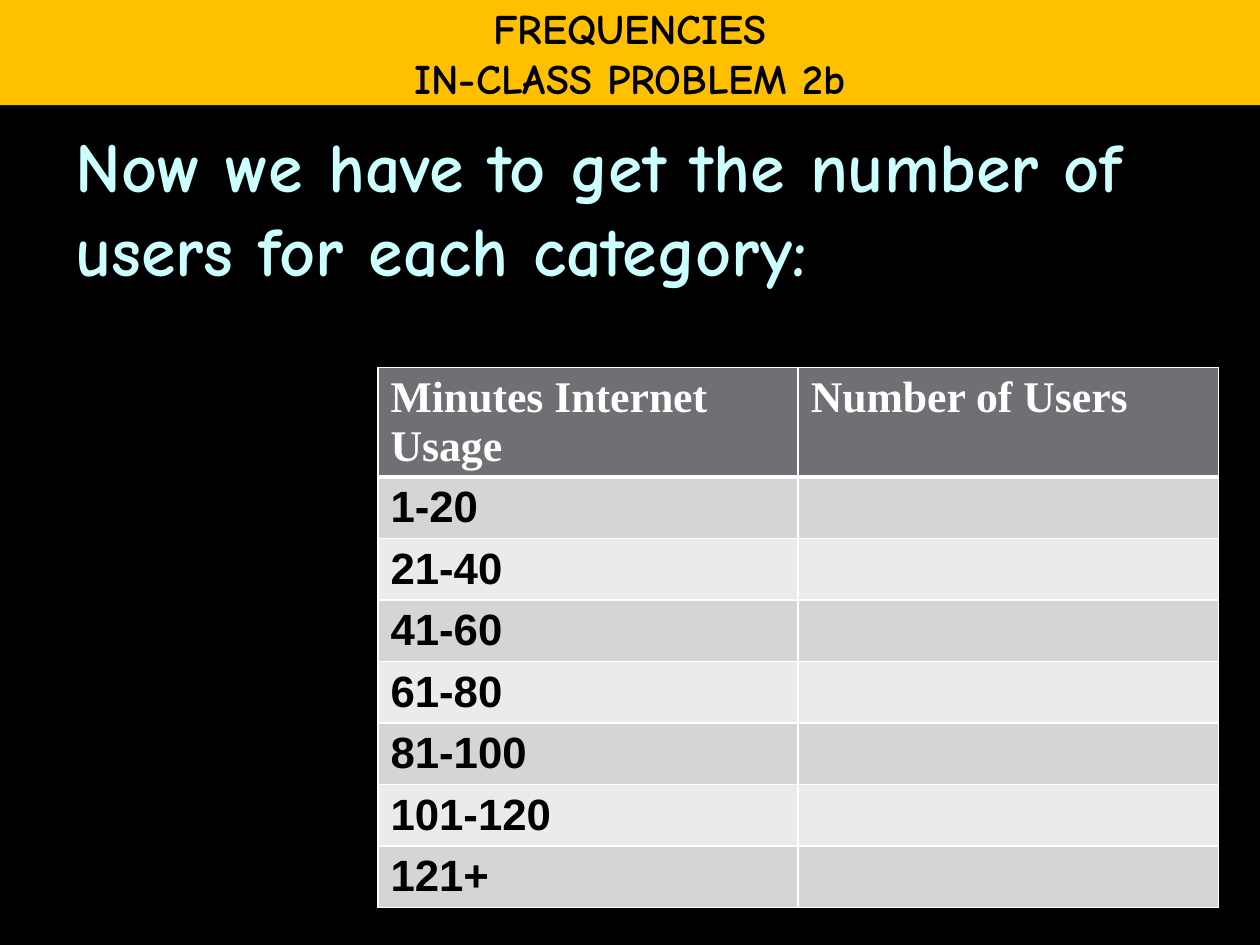
from pptx import Presentation
from pptx import util as u
from pptx.dml.color import RGBColor
from pptx.enum import text
from pptx.oxml import xmlchemy
from lxml import etree
from pptx.oxml.ns import qn

HEADERS = ["Minutes Internet Usage", "Number of Users"]
CATEGORIES = ["1-20", "21-40", "41-60", "61-80", "81-100", "101-120", "121+"]
BANDS = ["D5D5D6", "EBEBEC"]
HEADER_FILL = "6F6F74"
WHITE, BLACK = "FFFFFF", "000000"


def paint(fill, color):
    fill.solid()
    fill.fore_color.rgb = RGBColor.from_string(color)


def place(box, left, top, width, height):
    box.left, box.top = u.Cm(left), u.Cm(top)
    box.width, box.height = u.Cm(width), u.Cm(height)


def add_span(para, words, size, font, color):
    span = para.add_run()
    span.text = words
    span.font.size = u.Pt(size)
    span.font.name = font
    span.font.bold = True
    span.font.color.rgb = RGBColor.from_string(color)


def add_banner(page, lines):
    box = page.shapes.title
    place(box, 0, 0, 25.4, 2.12)
    paint(box.fill, "FFC000")
    frame = box.text_frame
    frame.auto_size = text.MSO_AUTO_SIZE.NONE
    frame.word_wrap = False
    frame.vertical_anchor = text.MSO_ANCHOR.MIDDLE
    for index, line in enumerate(lines):
        para = frame.add_paragraph() if index else frame.paragraphs[0]
        para.alignment = text.PP_ALIGN.CENTER
        add_span(para, line, 24, "Comic Neue", BLACK)


def add_body(page, words):
    box = page.placeholders[1]
    place(box, 1.27, 2.34, 22.86, 15.67)
    frame = box.text_frame
    frame.auto_size = text.MSO_AUTO_SIZE.NONE
    para = frame.paragraphs[0]
    add_span(para, words, 40, "Comic Neue", "CCFFFF")
    settings = para._p.get_or_add_pPr()
    settings.set("marL", "0")
    settings.set("indent", "0")
    etree.SubElement(settings, qn("a:buNone"))


def set_borders(cell, top, bottom):
    """Draw white borders, with the top and bottom widths in points."""
    settings = cell._tc.get_or_add_tcPr()
    for side, width in (("L", 1), ("R", 1), ("T", top), ("B", bottom)):
        line = etree.SubElement(settings, qn(f"a:ln{side}"), w=str(u.Pt(width)))
        fill = etree.SubElement(line, qn("a:solidFill"))
        etree.SubElement(fill, qn("a:srgbClr"), val=WHITE)


def add_frequency_table(page):
    rows = [HEADERS] + [[category, ""] for category in CATEGORIES]
    header_height, row_height = 2.2, 1.24
    height = header_height + row_height * len(CATEGORIES)
    table = page.shapes.add_table(len(rows), len(HEADERS), u.Cm(7.62), u.Cm(7.41),
                                  u.Cm(16.94), u.Cm(height)).table
    for r, row in enumerate(rows):
        is_header = r == 0
        table.rows[r].height = u.Cm(header_height if is_header else row_height)
        for c, words in enumerate(row):
            cell = table.cell(r, c)
            set_borders(cell, 3 if r == 1 else 1, 3 if is_header else 1)
            paint(cell.fill, HEADER_FILL if is_header else BANDS[(r - 1) % 2])
            if words:
                add_span(cell.text_frame.paragraphs[0], words, 25,
                         "Times New Roman" if is_header else "Arial",
                         WHITE if is_header else BLACK)


def main():
    deck = Presentation()
    deck.slide_width, deck.slide_height = u.Cm(25.4), u.Cm(19.05)
    page = deck.slides.add_slide(deck.slide_layouts[1])
    paint(page.background.fill, BLACK)
    add_body(page, "Now we have to get the number of users for each category:")
    add_frequency_table(page)
    add_banner(page, ["FREQUENCIES", "IN-CLASS PROBLEM 2b"])
    deck.save("out.pptx")


if __name__ == "__main__":
    main()
